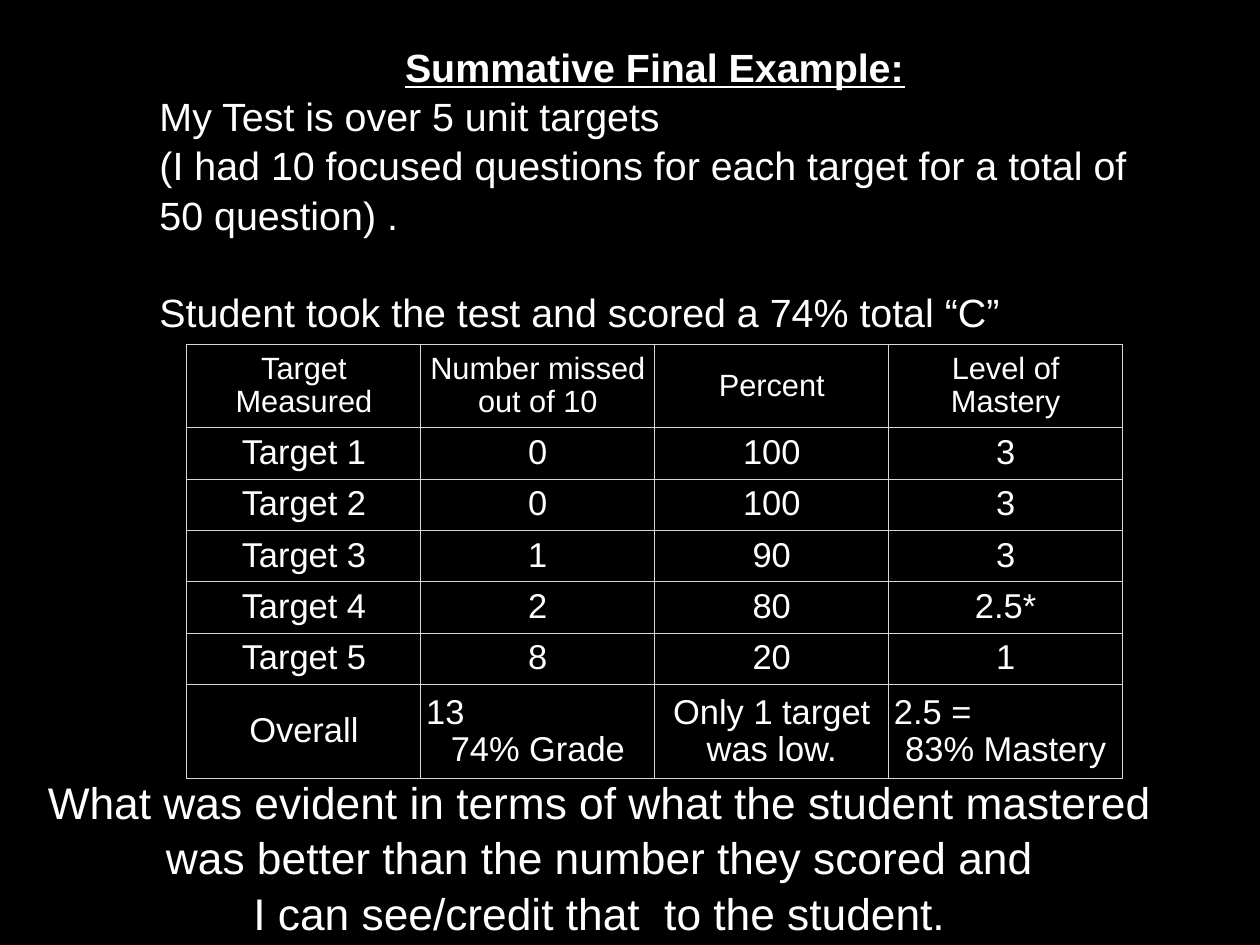
from dataclasses import dataclass

from lxml import etree
from pptx import Presentation
from pptx.dml.color import RGBColor
from pptx.enum.text import MSO_ANCHOR, MSO_AUTO_SIZE, PP_ALIGN
from pptx.oxml.ns import qn
from pptx.util import Inches, Pt

CENTER, LEFT = PP_ALIGN.CENTER, PP_ALIGN.LEFT
MIDDLE, TOP = MSO_ANCHOR.MIDDLE, MSO_ANCHOR.TOP
NO_AUTOFIT = MSO_AUTO_SIZE.NONE

COLORS = {"background": "000000", "text": "FFFFFF", "border": "D6D7D6"}
FONT = "Arial"
INSET = Inches(0.06)
TITLE_AND_CONTENT = 1


@dataclass
class Line:
    text: str
    alignment: PP_ALIGN = CENTER
    bold: bool = False
    underline: bool = False
    space_before: float = 0
    right_indent: float = 0


@dataclass
class Box:
    left: float
    top: float
    width: float
    height: float


HEADING = [Line("Summative Final Example:", bold=True, underline=True)]
INTRODUCTION = [
    Line("My Test is over 5 unit targets", LEFT),
    Line("(I had 10 focused questions for each target for a total of 50 question) .", LEFT),
    Line("Student took the test and scored a 74% total “C”", LEFT, space_before=38.4),
]
CONCLUSION = [
    Line("What was evident in terms of what the student mastered", right_indent=0.55),
    Line("was better than the number they scored and"),
    Line("I can see/credit that  to the student."),
]

COLUMN_WIDTH = 2.64
HEADER_HEIGHT, TARGET_HEIGHT, OVERALL_HEIGHT = 0.94, 0.58, 1.06
HEADER = ["Target Measured", "Number missed out of 10", "Percent", "Level of Mastery"]
TARGETS = [
    ["Target 1", "0", "100", "3"],
    ["Target 2", "0", "100", "3"],
    ["Target 3", "1", "90", "3"],
    ["Target 4", "2", "80", "2.5*"],
    ["Target 5", "8", "20", "1"],
]
OVERALL = ["Overall", "13\n74% Grade", "Only 1 target was low.", "2.5 =\n83% Mastery"]


def write_lines(text_frame, lines: list[Line], size: float, spacing: float) -> None:
    text_frame.text = "\n".join(line.text for line in lines)
    for paragraph, line in zip(text_frame.paragraphs, lines):
        paragraph.alignment = line.alignment
        paragraph.line_spacing = spacing
        paragraph.space_before = Pt(line.space_before)
        paragraph.space_after = Pt(0)
        for run in paragraph.runs:
            run.font.name = FONT
            run.font.size = Pt(size)
            run.font.bold = line.bold
            run.font.underline = line.underline
            run.font.color.rgb = RGBColor.from_string(COLORS["text"])
        # No bullet and no hanging indent
        properties = paragraph._p.get_or_add_pPr()
        properties.set("marL", "0")
        properties.set("indent", "0")
        if line.right_indent:
            properties.set("marR", str(Inches(line.right_indent)))
        etree.SubElement(properties, qn("a:buNone"))


def set_insets(target) -> None:
    target.margin_left = target.margin_right = INSET
    target.margin_top = target.margin_bottom = INSET


def fill_text_shape(shape, box: Box, lines: list[Line], size: float,
                    anchor: MSO_ANCHOR) -> None:
    shape.left, shape.top = Inches(box.left), Inches(box.top)
    shape.width, shape.height = Inches(box.width), Inches(box.height)
    text_frame = shape.text_frame
    text_frame.word_wrap = True
    text_frame.auto_size = NO_AUTOFIT
    text_frame.vertical_anchor = anchor
    set_insets(text_frame)
    write_lines(text_frame, lines, size, spacing=1.05)


def add_borders(cell) -> None:
    properties = cell._tc.get_or_add_tcPr()
    for side in ("lnL", "lnR", "lnT", "lnB"):
        border = etree.SubElement(properties, qn(f"a:{side}"), w=str(Pt(1)))
        fill = etree.SubElement(border, qn("a:solidFill"))
        etree.SubElement(fill, qn("a:srgbClr"), val=COLORS["border"])


def format_cell(cell, text: str, size: float) -> None:
    texts = text.split("\n")
    lines = [Line(part) for part in texts]
    if len(lines) > 1:
        lines[0].alignment = LEFT
    write_lines(cell.text_frame, lines, size, spacing=0.96)
    cell.vertical_anchor = MIDDLE
    set_insets(cell)
    add_borders(cell)
    cell.fill.solid()
    cell.fill.fore_color.rgb = RGBColor.from_string(COLORS["background"])


def add_results_table(slide, left: float, top: float) -> None:
    rows = [HEADER, *TARGETS, OVERALL]
    heights = [HEADER_HEIGHT, *[TARGET_HEIGHT] * len(TARGETS), OVERALL_HEIGHT]
    table = slide.shapes.add_table(
        len(rows), len(HEADER), Inches(left), Inches(top),
        Inches(COLUMN_WIDTH * len(HEADER)), Inches(sum(heights))).table
    table.first_row = table.horz_banding = False
    for column in table.columns:
        column.width = Inches(COLUMN_WIDTH)
    for row, height, texts in zip(table.rows, heights, rows):
        row.height = Inches(height)
        for cell, text in zip(row.cells, texts):
            format_cell(cell, text, size=25 if texts is HEADER else 28)


def main() -> None:
    presentation = Presentation()
    presentation.slide_width = Inches(14.22)
    presentation.slide_height = Inches(10.67)
    slide = presentation.slides.add_slide(presentation.slide_layouts[TITLE_AND_CONTENT])
    slide.background.fill.solid()
    slide.background.fill.fore_color.rgb = RGBColor.from_string(COLORS["background"])

    # Heading and introduction
    fill_text_shape(slide.shapes.title, Box(1.74, 0.42, 11.3, 0.65), HEADING, 32, MIDDLE)
    fill_text_shape(slide.placeholders[1], Box(1.74, 0.95, 11.3, 2.87),
                    INTRODUCTION, 32, TOP)

    # Results by target
    add_results_table(slide, left=2.11, top=3.89)

    # Conclusion
    box = Box(0.42, 8.7, 13.24, 1.93)
    conclusion = slide.shapes.add_textbox(0, 0, Inches(box.width), Inches(box.height))
    fill_text_shape(conclusion, box, CONCLUSION, 36, MIDDLE)

    presentation.save("out.pptx")


if __name__ == "__main__":
    main()
